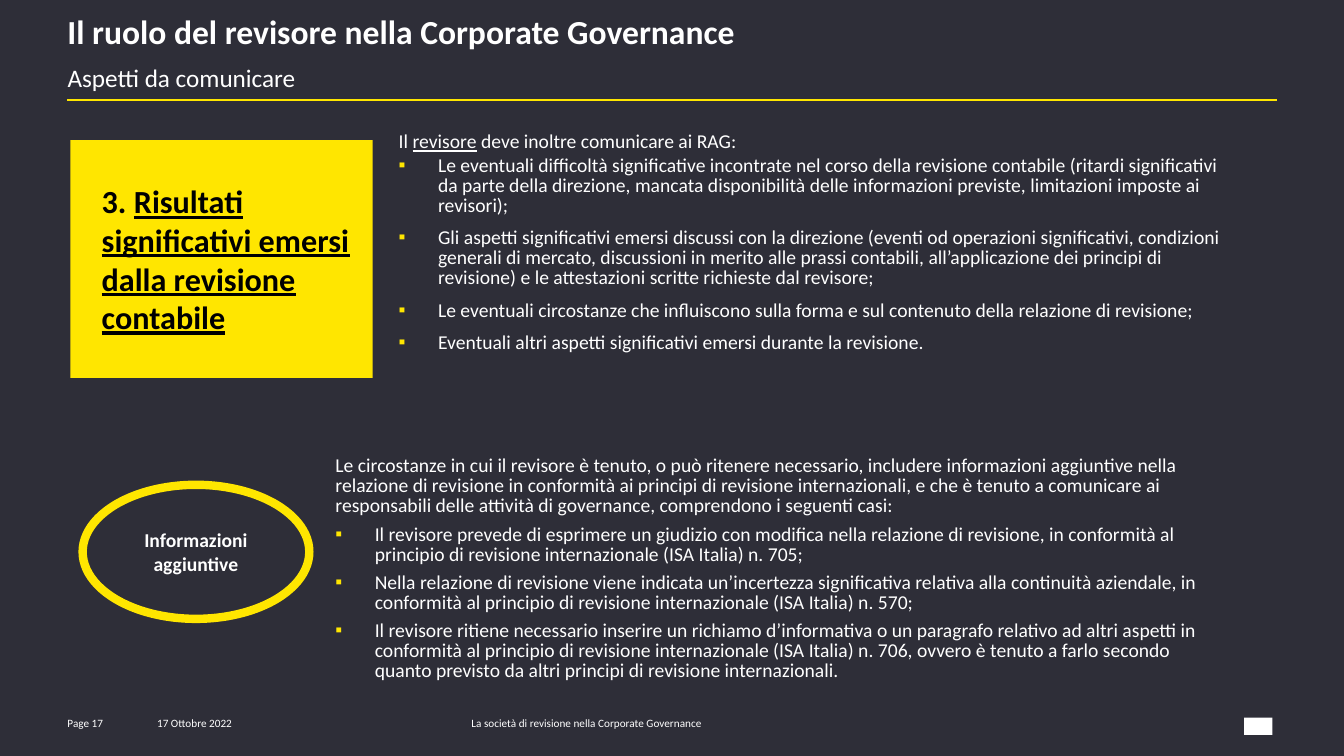
from pptx import Presentation
from pptx.dml.color import RGBColor
from pptx.enum.shapes import MSO_CONNECTOR, MSO_SHAPE
from pptx.enum.text import MSO_ANCHOR, PP_ALIGN
from pptx.oxml.ns import qn
from pptx.util import Inches, Pt
from lxml.etree import SubElement

# Content: a paragraph is a list of (text, underlined) spans
HEADING = "Il ruolo del revisore nella Corporate Governance"
SUBTITLE = "Aspetti da comunicare"
RESULTS_LABEL = [("3. ", False),
                 ("Risultati significativi emersi dalla revisione contabile", True)]
RESULTS_INTRO = [("Il ", False), ("revisore", True),
                 (" deve inoltre comunicare ai RAG:", False)]
RESULTS_BULLETS = [
    "Le eventuali difficoltà significative incontrate nel corso della revisione contabile (ritardi significativi da parte della direzione, mancata disponibilità delle informazioni previste, limitazioni imposte ai revisori);",
    "Gli aspetti significativi emersi discussi con la direzione (eventi od operazioni significativi, condizioni generali di mercato, discussioni in merito alle prassi contabili, all’applicazione dei principi di revisione) e le attestazioni scritte richieste dal revisore;",
    "Le eventuali circostanze che influiscono sulla forma e sul contenuto della relazione di revisione;",
    "Eventuali altri aspetti significativi emersi durante la revisione.",
]
EXTRA_LABEL = "Informazioni aggiuntive"
EXTRA_INTRO = "Le circostanze in cui il revisore è tenuto, o può ritenere necessario, includere informazioni aggiuntive nella relazione di revisione in conformità ai principi di revisione internazionali, e che è tenuto a comunicare ai responsabili delle attività di governance, comprendono i seguenti casi:"
EXTRA_BULLETS = [
    "Il revisore prevede di esprimere un giudizio con modifica nella relazione di revisione, in conformità al principio di revisione internazionale (ISA Italia) n. 705;",
    "Nella relazione di revisione viene indicata un’incertezza significativa relativa alla continuità aziendale, in conformità al principio di revisione internazionale (ISA Italia) n. 570;",
    "Il revisore ritiene necessario inserire un richiamo d’informativa o un paragrafo relativo ad altri aspetti in conformità al principio di revisione internazionale (ISA Italia) n. 706, ovvero è tenuto a farlo secondo quanto previsto da altri principi di revisione internazionali.",
]
FOOTERS = [  # text, left, width
    ("Page 17", 0.67, 0.73),
    ("17 Ottobre 2022", 1.56, 1.3),
    ("La società di revisione nella Corporate Governance", 4.68, 3.38),
]

COLORS = {"background": "2E2E38", "accent": "FFE600", "text": "FFFFFF", "dark": "000000"}
FONT = "Calibri"
BULLET_INDENT = 0.39
TIGHT = {"line_spacing": 0.85, "space_after": Pt(6)}
SPACED = {**TIGHT, "space_before": Pt(2.8)}


def color(name):
    return RGBColor.from_string(COLORS[name])


def set_frame(shape, insets=(0, 0, 0, 0), anchor=MSO_ANCHOR.TOP):
    left, top, right, bottom = map(Inches, insets)
    values = {"word_wrap": True, "vertical_anchor": anchor, "margin_left": left,
              "margin_top": top, "margin_right": right, "margin_bottom": bottom}
    for name, value in values.items():
        setattr(shape.text_frame, name, value)
    return shape.text_frame


def write(para, content, size, tone="text", bold=False, layout=None, indent=0, bullet=False):
    for name, value in (layout or {}).items():
        setattr(para, name, value)
    properties = para._p.get_or_add_pPr()
    properties.set("marL", str(Inches(indent)))
    properties.set("indent", str(-Inches(indent) if bullet else 0))
    if bullet:
        tint = SubElement(properties, qn("a:buClr"))
        SubElement(tint, qn("a:srgbClr"), val=COLORS["accent"])
        SubElement(properties, qn("a:buFont"), typeface="Arial")
        SubElement(properties, qn("a:buChar"), char="▪")
    spans = [(content, False)] if isinstance(content, str) else content
    for text, underlined in spans:
        span = para.add_run()
        span.text = text
        values = {"name": FONT, "size": Pt(size), "bold": bold, "underline": underlined}
        for name, value in values.items():
            setattr(span.font, name, value)
        span.font.color.rgb = color(tone)


def add_text(page, place, insets=(0, 0, 0, 0), anchor=MSO_ANCHOR.TOP):
    box = page.shapes.add_textbox(*map(Inches, place))
    return set_frame(box, insets, anchor)


def add_bullets(frame, items, layout):
    for item in items:
        write(frame.add_paragraph(), item, 14, layout=layout,
              indent=BULLET_INDENT, bullet=True)


def add_figure(page, kind, place, fill=None, line_width=0):
    figure = page.shapes.add_shape(kind, *map(Inches, place))
    figure.shadow.inherit = False
    if fill:
        figure.fill.solid()
        figure.fill.fore_color.rgb = color(fill)
    else:
        figure.fill.background()
    if line_width:
        figure.line.color.rgb = color("accent")
        figure.line.width = Pt(line_width)
    else:
        figure.line.fill.background()
    return figure


def main():
    deck = Presentation()
    deck.slide_width, deck.slide_height = Inches(13.34), Inches(7.5)
    page = deck.slides.add_slide(deck.slide_layouts[5])
    page.background.fill.solid()
    page.background.fill.fore_color.rgb = color("background")

    # Heading, subtitle and rule
    title = page.shapes.title
    title.left, title.top, title.width, title.height = map(Inches, (0.67, 0.66, 12.01, 0.37))
    write(set_frame(title).paragraphs[0], SUBTITLE, 18,
          layout={"line_spacing": 0.85, "alignment": PP_ALIGN.LEFT})
    heading = add_text(page, (0.67, 0.13, 8.5, 0.38), (0, 0.04, 0, 0))
    write(heading.paragraphs[0], HEADING, 24, bold=True, layout=TIGHT)
    rule = page.shapes.add_connector(
        MSO_CONNECTOR.STRAIGHT, *map(Inches, (0.67, 0.99, 12.68, 0.99)))
    rule.line.color.rgb = color("accent")
    rule.line.width = Pt(1.5)
    SubElement(rule._element.spPr, qn("a:effectLst"))

    # Significant results
    panel = add_figure(page, MSO_SHAPE.RECTANGLE, (0.7, 1.39, 3, 2.36), fill="accent")
    label = set_frame(panel, (0.06,) * 4, MSO_ANCHOR.MIDDLE)
    write(label.paragraphs[0], RESULTS_LABEL, 23, "dark", True,
          {"alignment": PP_ALIGN.LEFT}, indent=0.25)
    results = add_text(page, (3.86, 1.23, 8.43, 2.82), (0.1, 0.05, 0.1, 0.05))
    write(results.paragraphs[0], RESULTS_INTRO, 14, layout={"space_before": Pt(2.8)})
    add_bullets(results, RESULTS_BULLETS, SPACED)

    # Additional information
    oval = add_figure(page, MSO_SHAPE.OVAL, (0.82, 4.81, 2.25, 1.33), line_width=6)
    label = set_frame(oval, (0.1, 0.05, 0.1, 0.05), MSO_ANCHOR.MIDDLE)
    write(label.paragraphs[0], EXTRA_LABEL, 14, bold=True,
          layout={"alignment": PP_ALIGN.CENTER})
    extra = add_text(page, (3.33, 4.49, 8.78, 2.55), (0, 0.04, 0, 0))
    write(extra.paragraphs[0], EXTRA_INTRO, 14, layout=TIGHT)
    add_bullets(extra, EXTRA_BULLETS, TIGHT)

    # Footer with a plain corner mark
    for text, left, width in FOOTERS:
        footer = add_text(page, (left, 7.07, width, 0.2), anchor=MSO_ANCHOR.MIDDLE)
        write(footer.paragraphs[0], text, 8)
    add_figure(page, MSO_SHAPE.RECTANGLE, (12.35, 7.12, 0.28, 0.17), fill="text")

    deck.save("out.pptx")


if __name__ == "__main__":
    main()
